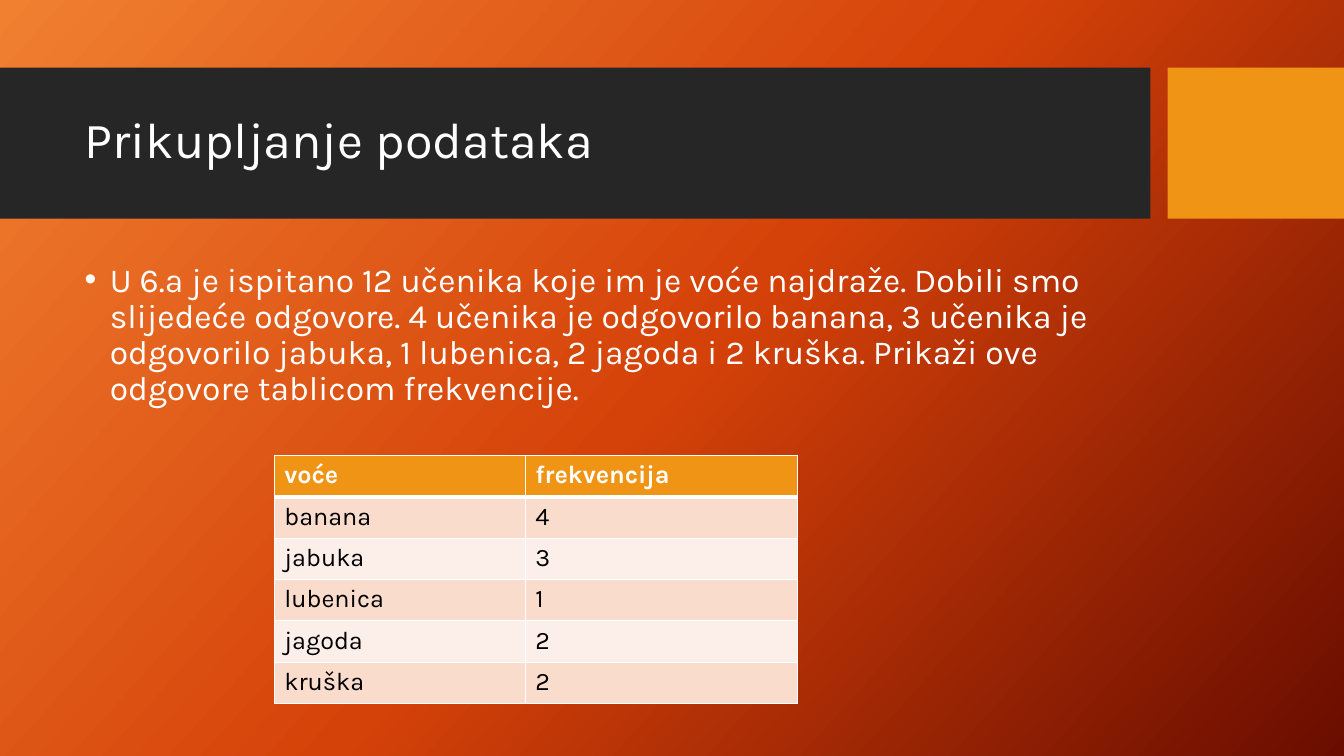
import copy
from dataclasses import dataclass

import pptx
import pptx.dml.color
import pptx.enum.shapes
import pptx.enum.text
import pptx.oxml
import pptx.oxml.ns
import pptx.util

Inches = pptx.util.Inches
Pt = pptx.util.Pt
ANCHOR = pptx.enum.text.MSO_ANCHOR


@dataclass(frozen=True)
class Theme:
    font: str = "Karla"
    title_size: int = 36
    body_size: int = 24
    table_size: int = 18
    light: str = "FFFFFF"
    dark: str = "000000"
    band: str = "262626"
    accent: str = "F09415"
    row_fills: tuple = ("F9DCCC", "FCEEE8")
    backdrop: tuple = ((0, "F18031"), (0.5, "D54209"), (1, "6A0D00"))
    backdrop_angle: int = 42


def rgb(value):
    return pptx.dml.color.RGBColor.from_string(value)


def add_child(parent, tag, **attributes):
    child = pptx.oxml.parse_xml(f"<a:{tag} {pptx.oxml.ns.nsdecls('a')}/>")
    for name, value in attributes.items():
        child.set(name, str(value))
    parent.append(child)
    return child


def write(frame, text, *, font, size, color, bold=False, spacing=None, bullet=None):
    """Fill a frame with one paragraph; a bullet brings a hanging indent."""
    paragraph = frame.paragraphs[0]
    paragraph.text = text
    if bullet:
        properties = paragraph._p.get_or_add_pPr()
        properties.set("marL", str(Inches(0.25)))
        properties.set("indent", str(Inches(-0.25)))
        add_child(properties, "buFont", typeface="Arial")
        add_child(properties, "buChar", char=bullet)
    if spacing:
        paragraph.line_spacing = spacing
    run_font = paragraph.runs[0].font
    run_font.name = font
    run_font.size = Pt(size)
    run_font.bold = bold
    run_font.color.rgb = rgb(color)


class SlideBuilder:
    def __init__(self, slide, theme):
        self.slide = slide
        self.theme = theme

    def backdrop(self):
        fill = self.slide.background.fill
        fill.gradient()
        # python-pptx counts the angle counter-clockwise
        fill.gradient_angle = 360 - self.theme.backdrop_angle
        stop_list = self.slide.element.xpath(".//p:bg//a:gsLst")[0]
        stop_list.append(copy.deepcopy(stop_list[-1]))
        for stop, (position, color) in zip(fill.gradient_stops, self.theme.backdrop):
            stop.position = position
            stop.color.rgb = rgb(color)

    def block(self, left, top, width, height, color):
        block = self.slide.shapes.add_shape(
            pptx.enum.shapes.MSO_SHAPE.RECTANGLE,
            Inches(left), Inches(top), Inches(width), Inches(height))
        block.shadow.inherit = False
        block.fill.solid()
        block.fill.fore_color.rgb = rgb(color)
        block.line.fill.background()

    def text(self, left, top, width, height, text, *, anchor=ANCHOR.TOP, **style):
        frame = self.slide.shapes.add_textbox(
            Inches(left), Inches(top), Inches(width), Inches(height)).text_frame
        frame.word_wrap = True
        frame.vertical_anchor = anchor
        write(frame, text, font=self.theme.font, color=self.theme.light, **style)

    def cell_border(self, cell, edge, width):
        line = add_child(cell._tc.get_or_add_tcPr(), f"ln{edge}", w=Pt(width))
        add_child(add_child(line, "solidFill"), "srgbClr", val=self.theme.light)

    def table(self, left, top, column_widths, row_height, rows):
        """Draw a table with a header row, banded rows and a thick rule between."""
        theme = self.theme
        table = self.slide.shapes.add_table(
            len(rows), len(column_widths), Inches(left), Inches(top),
            Inches(sum(column_widths)), Inches(row_height * len(rows))).table
        for column, width in zip(table.columns, column_widths):
            column.width = Inches(width)
        for r, values in enumerate(rows):
            header = r == 0
            fill = theme.accent if header else theme.row_fills[(r - 1) % 2]
            widths = {"L": 1, "R": 1, "T": 3 if r == 1 else 1, "B": 3 if header else 1}
            for c, value in enumerate(values):
                cell = table.cell(r, c)
                for edge, width in widths.items():
                    self.cell_border(cell, edge, width)
                cell.fill.solid()
                cell.fill.fore_color.rgb = rgb(fill)
                write(cell.text_frame, value, font=theme.font, size=theme.table_size,
                      color=theme.light if header else theme.dark, bold=header)


def main():
    theme = Theme()
    deck = pptx.Presentation()
    deck.slide_width = Inches(13.33)
    deck.slide_height = Inches(7.5)
    page = SlideBuilder(deck.slides.add_slide(deck.slide_layouts[6]), theme)

    page.backdrop()
    page.block(0, 0.67, 11.41, 1.5, theme.band)
    page.block(11.58, 0.67, 1.75, 1.5, theme.accent)
    page.text(0.74, 0.82, 10.51, 1.18, "Prikupljanje podataka",
              anchor=ANCHOR.MIDDLE, size=theme.title_size, spacing=0.9)
    page.text(0.74, 2.56, 10.51, 3.94,
              "U 6.a je ispitano 12 učenika koje im je voće najdraže. "
              "Dobili smo slijedeće odgovore. 4 učenika je odgovorilo banana, "
              "3 učenika je odgovorilo jabuka, 1 lubenica, 2 jagoda i 2 kruška. "
              "Prikaži ove odgovore tablicom frekvencije.",
              size=theme.body_size, spacing=0.9, bullet="•")
    frequencies = [("voće", "frekvencija"), ("banana", "4"), ("jabuka", "3"),
                   ("lubenica", "1"), ("jagoda", "2"), ("kruška", "2")]
    page.table(2.72, 4.52, (2.49, 2.7), 0.41, frequencies)

    deck.save("out.pptx")


if __name__ == "__main__":
    main()
